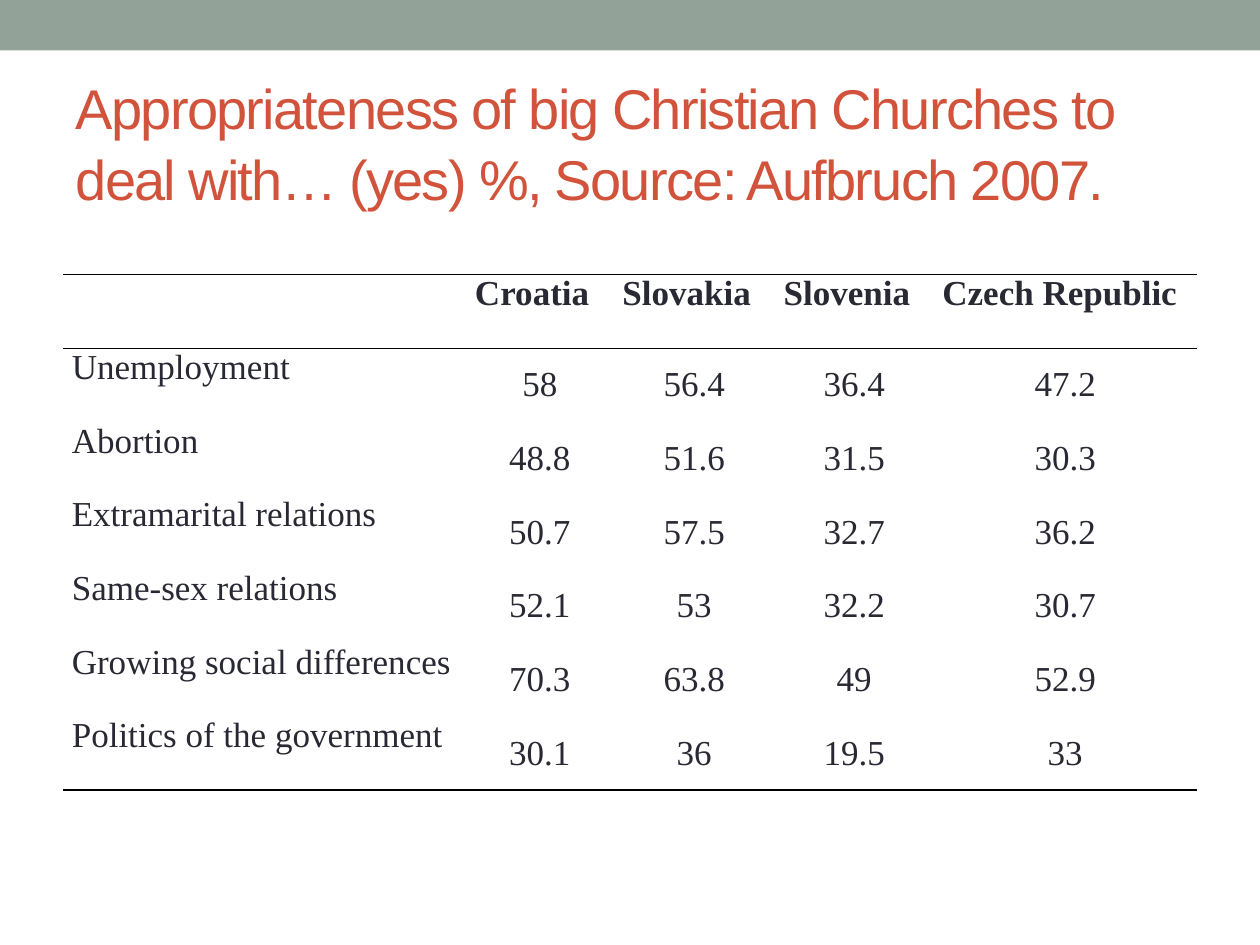
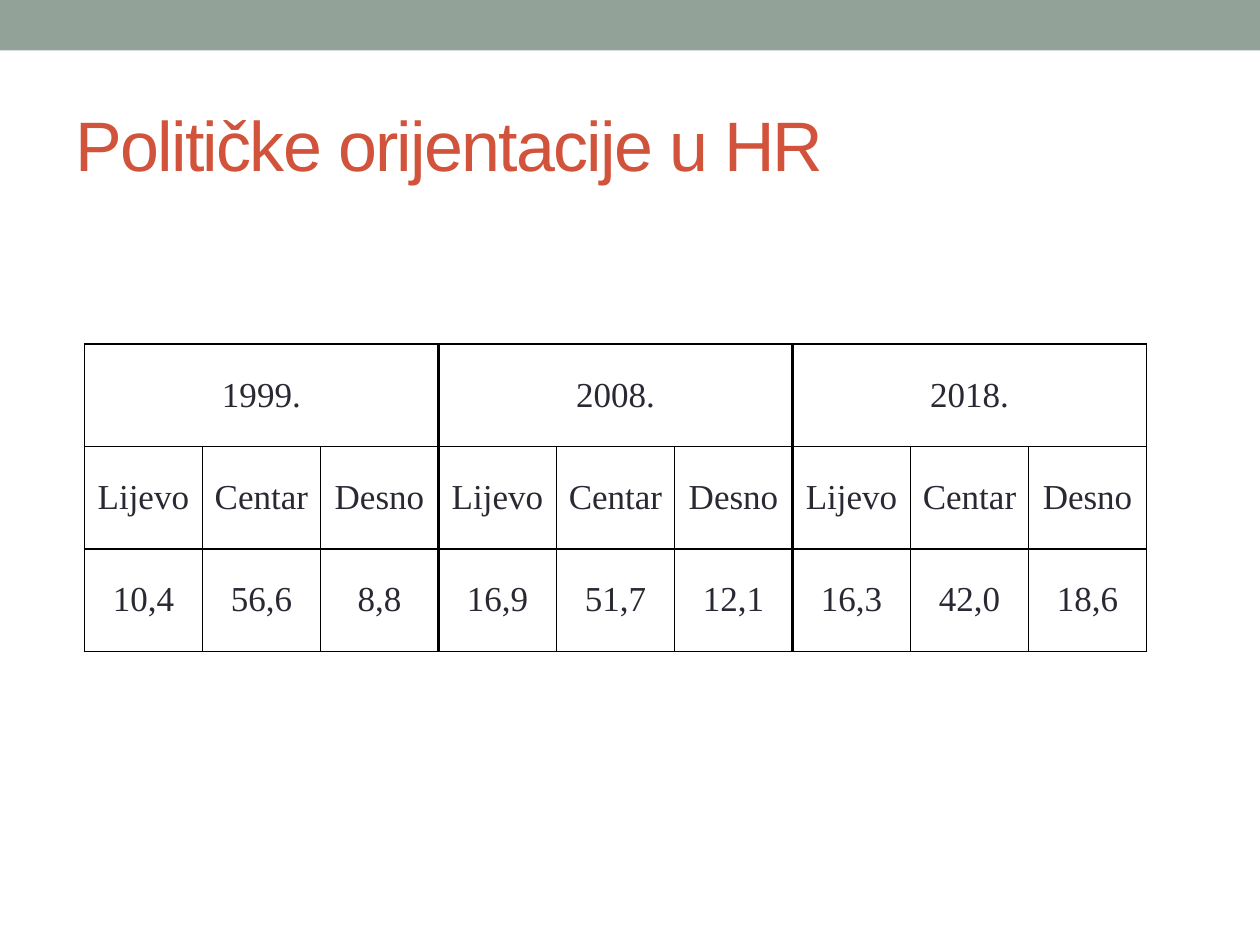
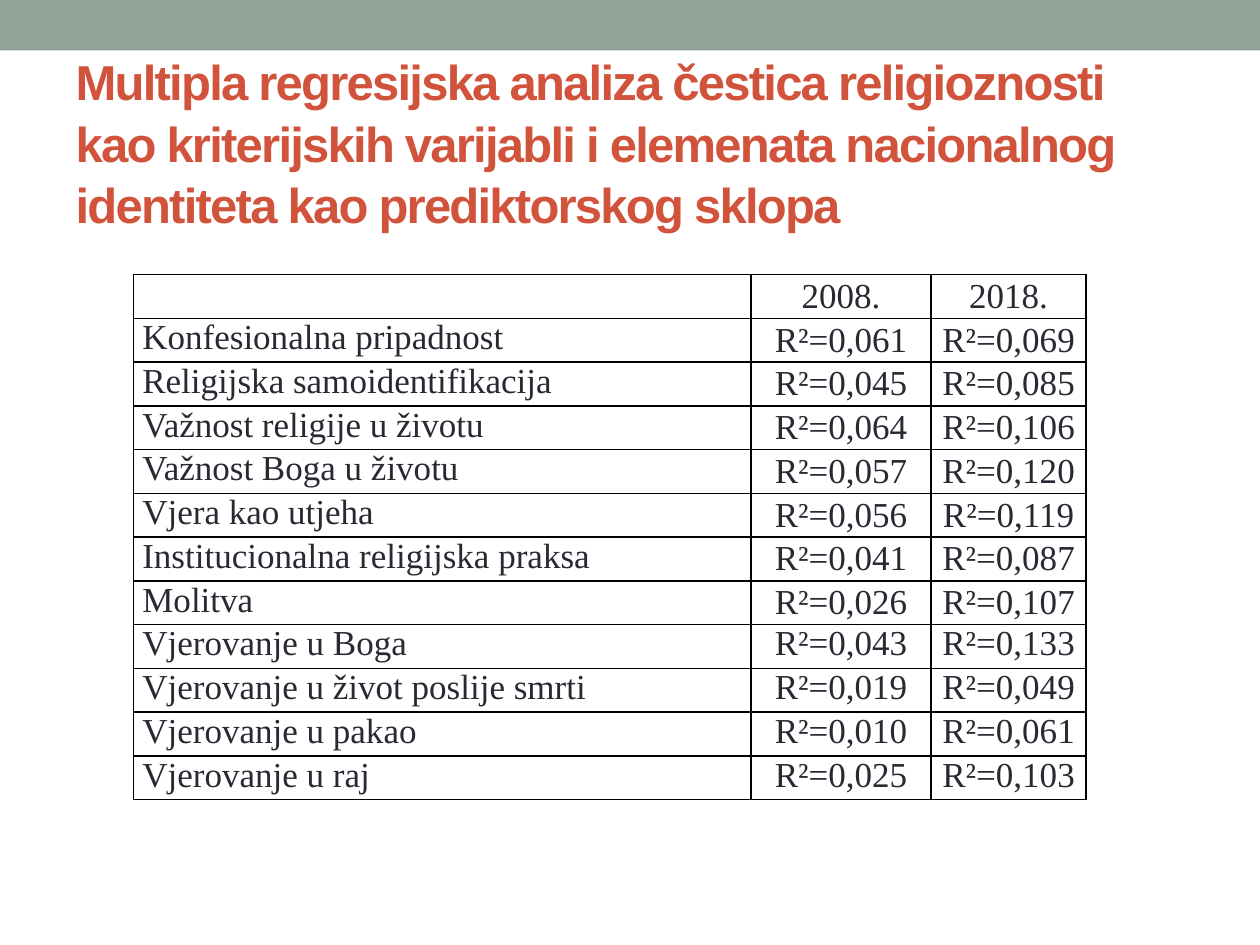
from dataclasses import dataclass, field

from lxml.etree import SubElement
from pptx import Presentation
from pptx.dml.color import RGBColor
from pptx.enum.shapes import MSO_SHAPE as Preset
from pptx.enum.text import MSO_ANCHOR as Anchor, MSO_AUTO_SIZE as AutoSize, PP_ALIGN as Align
from pptx.oxml.ns import qn
from pptx.util import Pt

COLOURS = {
    "band": "93A299",
    "title": "D2533C",
    "text": "292934",
    "rule": "000000",
}
TITLE_FONT, TABLE_FONT = "Arial", "Times New Roman"
TITLE_ONLY = 5
TITLE_FRAME = {"left": Pt(36), "top": Pt(41.76), "width": Pt(648), "height": Pt(77.76)}
CELL_MARGINS = {"margin_left": Pt(5.04), "margin_right": Pt(5.04),
                "margin_top": Pt(0), "margin_bottom": Pt(0)}


@dataclass
class TitleSpec:
    text: str
    size: float
    bold: bool = False


@dataclass
class TableSpec:
    """Rules map the number of a grid line to its weight in points."""
    left: float
    top: float
    columns: list[float]
    row_height: float
    rows: list[list[str]]
    horizontal_rules: dict[int, float]
    vertical_rules: dict[int, float] = field(default_factory=dict)
    has_labels: bool = True
    bold_header: bool = False
    top_anchored_from: int = 99
    header_span: int = 1


def set_values(target: object, values: dict) -> None:
    for name, value in values.items():
        setattr(target, name, value)


def colour(name: str) -> RGBColor:
    return RGBColor.from_string(COLOURS[name])


def format_font(font, name: str, size: float, bold: bool, colour_name: str) -> None:
    set_values(font, {"name": name, "size": Pt(size), "bold": bold})
    font.color.rgb = colour(colour_name)


# Shared parts: band and title
def add_band(slide, width: int) -> None:
    band = slide.shapes.add_shape(Preset.RECTANGLE, 0, 0, width, Pt(28.8))
    band.shadow.inherit = False
    band.fill.solid()
    band.fill.fore_color.rgb = colour("band")
    band.line.fill.background()
    slide.shapes.element.insert(2, band.element)


def format_title(slide, spec: TitleSpec) -> None:
    title = slide.shapes.title
    set_values(title, TITLE_FRAME)
    frame = title.text_frame
    set_values(frame, {"word_wrap": True, "auto_size": AutoSize.NONE,
                       "vertical_anchor": Anchor.MIDDLE})
    paragraph = frame.paragraphs[0]
    set_values(paragraph, {"alignment": Align.LEFT, "line_spacing": 1.05})
    run = paragraph.add_run()
    run.text = spec.text
    format_font(run.font, TITLE_FONT, spec.size, spec.bold, "title")
    run.font._element.set("spc", "-100")


# Tables
def set_borders(cell, weights: dict[str, float]) -> None:
    properties = cell._tc.get_or_add_tcPr()
    for side, weight in weights.items():
        line = SubElement(properties, qn(f"a:ln{side}"), w=str(Pt(weight)))
        if weight:
            fill = SubElement(line, qn("a:solidFill"))
            SubElement(fill, qn("a:srgbClr"), val=COLOURS["rule"])
        else:
            SubElement(line, qn("a:noFill"))


def fill_cell(cell, text: str, row: int, column: int, spec: TableSpec) -> None:
    horizontal, vertical = spec.horizontal_rules, spec.vertical_rules
    set_borders(cell, {"L": vertical.get(column, 0), "R": vertical.get(column + 1, 0),
                       "T": horizontal.get(row, 0), "B": horizontal.get(row + 1, 0)})
    cell.fill.background()
    set_values(cell, CELL_MARGINS)
    bold = spec.bold_header and row == 0
    is_label = bold or (spec.has_labels and column == 0)
    at_top = is_label or row >= spec.top_anchored_from
    cell.vertical_anchor = Anchor.TOP if at_top else Anchor.MIDDLE
    if text:
        paragraph = cell.text_frame.paragraphs[0]
        paragraph.alignment = Align.JUSTIFY if is_label else Align.CENTER
        run = paragraph.add_run()
        run.text = text
        format_font(run.font, TABLE_FONT, 20, bold, "text")


def add_data_table(slide, spec: TableSpec) -> None:
    row_count, column_count = len(spec.rows), len(spec.columns)
    table = slide.shapes.add_table(
        row_count, column_count, Pt(spec.left), Pt(spec.top),
        Pt(sum(spec.columns)), Pt(spec.row_height * row_count)).table
    set_values(table, {"first_row": False, "horz_banding": False})
    for column, width in zip(table.columns, spec.columns):
        column.width = Pt(width)
    for row in table.rows:
        row.height = Pt(spec.row_height)
    for row, texts in enumerate(spec.rows):
        for column, text in enumerate(texts):
            fill_cell(table.cell(row, column), text, row, column, spec)
    if spec.header_span > 1:
        for start in range(0, column_count, spec.header_span):
            table.cell(0, start).merge(table.cell(0, start + spec.header_span - 1))


# Content
CHURCH_ROWS = [
    ["", "Croatia", "Slovakia", "Slovenia", "Czech Republic"],
    ["Unemployment", "58", "56.4", "36.4", "47.2"],
    ["Abortion", "48.8", "51.6", "31.5", "30.3"],
    ["Extramarital relations", "50.7", "57.5", "32.7", "36.2"],
    ["Same-sex relations", "52.1", "53", "32.2", "30.7"],
    ["Growing social differences", "70.3", "63.8", "49", "52.9"],
    ["Politics of the government", "30.1", "36", "19.5", "33"],
]
ORIENTATION_ROWS = [
    ["1999.", "", "", "2008.", "", "", "2018.", "", ""],
    ["Lijevo", "Centar", "Desno"] * 3,
    ["10,4", "56,6", "8,8", "16,9", "51,7", "12,1", "16,3", "42,0", "18,6"],
]
REGRESSION_VALUES = [
    ("Konfesionalna pripadnost", "0,061", "0,069"),
    ("Religijska samoidentifikacija", "0,045", "0,085"),
    ("Važnost religije u životu", "0,064", "0,106"),
    ("Važnost Boga u životu", "0,057", "0,120"),
    ("Vjera kao utjeha", "0,056", "0,119"),
    ("Institucionalna religijska praksa", "0,041", "0,087"),
    ("Molitva", "0,026", "0,107"),
    ("Vjerovanje u Boga", "0,043", "0,133"),
    ("Vjerovanje u život poslije smrti", "0,019", "0,049"),
    ("Vjerovanje u pakao", "0,010", "0,061"),
    ("Vjerovanje u raj", "0,025", "0,103"),
]
REGRESSION_ROWS = [["", "2008.", "2018."]] + [
    [label, f"R²={first}", f"R²={second}"] for label, first, second in REGRESSION_VALUES]

SLIDES = [
    (TitleSpec("Appropriateness of big Christian Churches to deal with… (yes) %, "
               "Source: Aufbruch 2007.", 32),
     TableSpec(36, 156.96, [230.4, 84.24, 92.16, 90.72, 150.48], 42.07, CHURCH_ROWS,
               horizontal_rules={0: 1, 1: 1, 7: 1}, bold_header=True)),
    (TitleSpec("Političke orijentacije u HR", 40),
     TableSpec(48.24, 196.56, [67.44] * 9, 58.56, ORIENTATION_ROWS,
               horizontal_rules=dict.fromkeys(range(4), 1),
               vertical_rules={line: 1.5 if line in (3, 6) else 1 for line in range(10)},
               has_labels=False, header_span=3)),
    (TitleSpec("Multipla regresijska analiza čestica religioznosti kao kriterijskih "
               "varijabli i elemenata nacionalnog identiteta kao prediktorskog sklopa",
               28, bold=True),
     TableSpec(76.32, 156.96, [352.8, 102.96, 88.56], 25.02, REGRESSION_ROWS,
               horizontal_rules=dict.fromkeys(range(13), 1),
               vertical_rules=dict.fromkeys(range(4), 1), top_anchored_from=8)),
]


def main() -> None:
    presentation = Presentation()
    set_values(presentation, {"slide_width": Pt(720), "slide_height": Pt(540)})
    for title_spec, table_spec in SLIDES:
        slide = presentation.slides.add_slide(presentation.slide_layouts[TITLE_ONLY])
        add_band(slide, presentation.slide_width)
        format_title(slide, title_spec)
        add_data_table(slide, table_spec)
    presentation.save("out.pptx")


if __name__ == "__main__":
    main()
